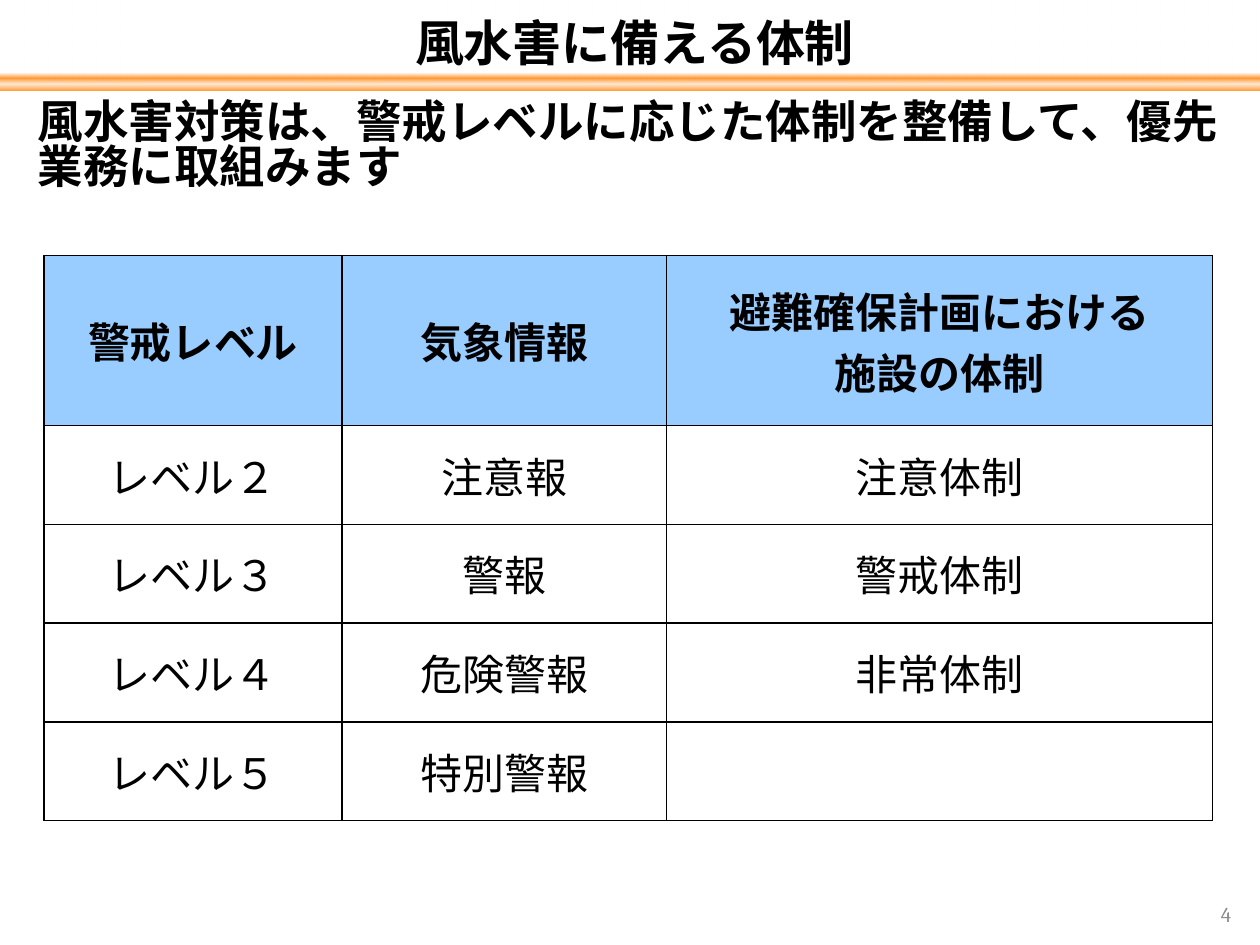
from lxml.etree import SubElement
from pptx import Presentation
from pptx.dml.color import RGBColor
from pptx.enum.text import MSO_ANCHOR, MSO_AUTO_SIZE, PP_ALIGN
from pptx.oxml.ns import qn
from pptx.util import Cm, Pt

TITLE = "風水害に備える体制"
LEAD = "風水害対策は、警戒レベルに応じた体制を整備して、優先業務に取組みます"
PAGE = "4"
ROWS = [
    ["警戒レベル", "気象情報", "避難確保計画における\n施設の体制"],
    ["レベル２", "注意報", "注意体制"],
    ["レベル３", "警報", "警戒体制"],
    ["レベル４", "危険警報", "非常体制"],
    ["レベル５", "特別警報", ""],
]
WIDTHS = [6, 6.55, 11]
HEAD, ROW = 3.43, 1.99

THEME = {
    "sans": "Noto Sans CJK JP", "serif": "Cambria",
    "ink": "000000", "gray": "8C8C8C", "head": "99CCFF", "cell": "FFFFFF",
    "title": 28, "lead": 26, "table": 24, "page": 12,
    "band": [(0, "FFFFFF", 100), (80, "FFFFFF", 100), (86, "FF9933", 100),
             (92, "FF9933", 20), (100, "FF9933", 100)],
}


def write(frame, text, size, face="sans", color="ink", bold=False,
          align=PP_ALIGN.CENTER, line=None, after=None):
    for i, part in enumerate(text.split("\n")):
        para = frame.add_paragraph() if i else frame.paragraphs[0]
        para.alignment = align
        if line:
            para.line_spacing = line
        if after:
            para.space_after = Pt(after)
        run = para.add_run()
        run.text = part
        font = run.font
        font.size, font.bold = Pt(THEME[size]), bold
        font.color.rgb = RGBColor.from_string(THEME[color])
        font.name = THEME[face]
        SubElement(font._element, qn("a:ea"), typeface=THEME["sans"])


def paint(shape):
    grad = SubElement(shape._element.spPr, qn("a:gradFill"), rotWithShape="1")
    stops = SubElement(grad, qn("a:gsLst"))
    for pos, color, alpha in THEME["band"]:
        stop = SubElement(stops, qn("a:gs"), pos=str(pos * 1000))
        tint = SubElement(stop, qn("a:srgbClr"), val=color)
        if alpha < 100:
            SubElement(tint, qn("a:alpha"), val=str(alpha * 1000))
    SubElement(grad, qn("a:lin"), ang="5400000", scaled="0")


def border(cell):
    props = cell._tc.get_or_add_tcPr()
    for side in "LRTB":
        edge = SubElement(props, qn("a:ln" + side), w=str(Pt(1)))
        fill = SubElement(edge, qn("a:solidFill"))
        SubElement(fill, qn("a:srgbClr"), val=THEME["ink"])


def box(slide, left, top, width, height):
    frame = slide.shapes.add_textbox(
        Cm(left), Cm(top), Cm(width), Cm(height)).text_frame
    frame.word_wrap = True
    return frame


def header(slide):
    title = slide.shapes.title
    title.left, title.top = Cm(0), Cm(0)
    title.width, title.height = Cm(25.58), Cm(1.83)
    paint(title)
    frame = title.text_frame
    frame.auto_size = MSO_AUTO_SIZE.NONE
    frame.vertical_anchor = MSO_ANCHOR.MIDDLE
    write(frame, TITLE, "title", bold=True, line=0.9)


def grid(slide):
    table = slide.shapes.add_table(
        len(ROWS), len(WIDTHS), Cm(0.89), Cm(5.15),
        Cm(sum(WIDTHS)), Cm(HEAD + ROW * (len(ROWS) - 1))).table
    for col, width in zip(table.columns, WIDTHS):
        col.width = Cm(width)
    for r, texts in enumerate(ROWS):
        top = r == 0
        table.rows[r].height = Cm(HEAD if top else ROW)
        for c, text in enumerate(texts):
            cell = table.cell(r, c)
            border(cell)
            cell.fill.solid()
            cell.fill.fore_color.rgb = RGBColor.from_string(
                THEME["head" if top else "cell"])
            cell.vertical_anchor = MSO_ANCHOR.MIDDLE
            if text:
                write(cell.text_frame, text, "table", face="serif", bold=top)


def main():
    deck = Presentation()
    deck.slide_width, deck.slide_height = Cm(25.4), Cm(19.05)
    slide = deck.slides.add_slide(deck.slide_layouts[5])
    header(slide)
    lead = box(slide, 0.51, 1.83, 24.69, 2.44)
    lead.margin_top = Cm(0.23)
    write(lead, LEAD, "lead", bold=True, align=PP_ALIGN.LEFT,
          line=0.83, after=6)
    grid(slide)
    page = box(slide, 19.35, 17.91, 5.72, 1.02)
    page.vertical_anchor = MSO_ANCHOR.MIDDLE
    write(page, PAGE, "page", face="serif", color="gray",
          align=PP_ALIGN.RIGHT)
    deck.save("out.pptx")


if __name__ == "__main__":
    main()
